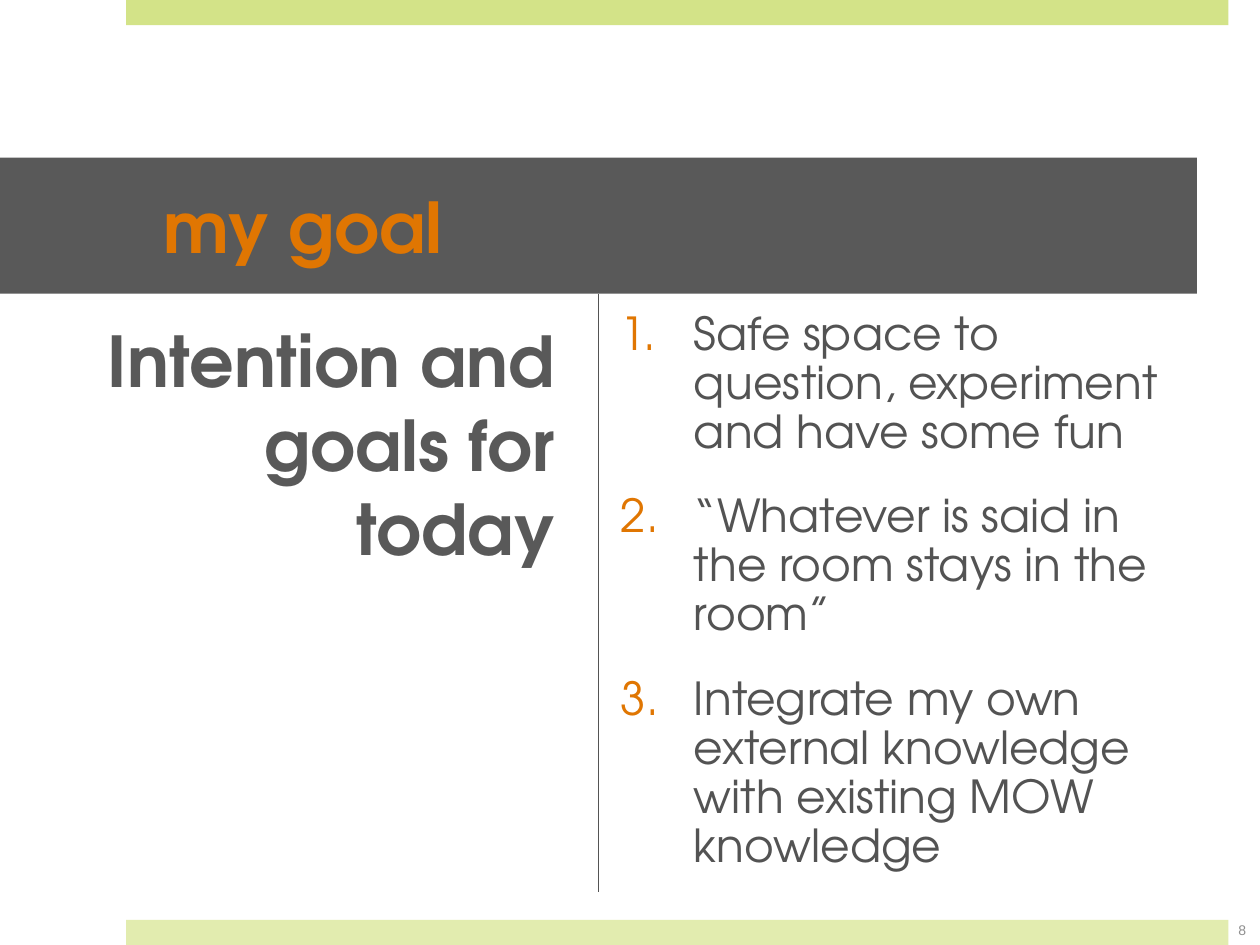
"""Build the "my goal" slide with a title band, an intention and three numbered goals."""
from lxml import etree
from pptx import Presentation
from pptx.dml.color import RGBColor
from pptx.enum import shapes, text
from pptx.oxml import ns
from pptx.util import Inches, Pt

GRAY, DARK_GRAY, ORANGE = "595959", "535353", "E07602"
FONT = "TeX Gyre Adventor"
GOALS = [
    "Safe space to question, experiment and have some fun",
    "“Whatever is said in the room stays in the room”",
    "Integrate my own external knowledge with existing MOW knowledge",
]


def color(value):
    return RGBColor.from_string(value)


def add_run(paragraph, words, size, value, name=FONT, bold=False):
    run = paragraph.add_run()
    run.text = words
    run.font.name = name
    run.font.size = Pt(size)
    run.font.bold = bold
    run.font.color.rgb = color(value)


presentation = Presentation()
presentation.slide_width = Inches(10)
presentation.slide_height = Inches(7.5)
slide = presentation.slides.add_slide(presentation.slide_layouts[6])

bars = []
for left, top, width, height, fill in [
    (1, 0, 8.75, 0.2, "D3E388"),
    (1, 7.3, 8.75, 0.2, "E2ECAF"),
    (0, 1.25, 9.5, 1.08, GRAY),
]:
    shape = slide.shapes.add_shape(
        shapes.MSO_SHAPE.RECTANGLE, Inches(left), Inches(top), Inches(width), Inches(height)
    )
    shape.shadow.inherit = False
    shape.fill.solid()
    shape.fill.fore_color.rgb = color(fill)
    shape.line.fill.background()
    bars.append(shape)

title = bars[-1]
title.text_frame.margin_left = Inches(1.3)
title.text_frame.margin_right = Inches(0.3)
title.text_frame.vertical_anchor = text.MSO_ANCHOR.MIDDLE
paragraph = title.text_frame.paragraphs[0]
paragraph.alignment = text.PP_ALIGN.LEFT
add_run(paragraph, "my goal", 40, ORANGE, bold=True)

frames = []
for left, top, width, height in [
    (9.61, 7.18, 0.5, 0.4),
    (0.25, 2.47, 4.25, 4.95),
    (4.83, 2.42, 4.67, 4.95),
]:
    box = slide.shapes.add_textbox(Inches(left), Inches(top), Inches(width), Inches(height))
    box.text_frame.word_wrap = True
    frames.append(box.text_frame)
number_frame, intention_frame, goals_frame = frames

number_frame.vertical_anchor = text.MSO_ANCHOR.MIDDLE
paragraph = number_frame.paragraphs[0]
paragraph.alignment = text.PP_ALIGN.CENTER
add_run(paragraph, "8", 8, "8F8F8F", name="Arial")

paragraph = intention_frame.paragraphs[0]
paragraph.alignment = text.PP_ALIGN.RIGHT
properties = paragraph._p.get_or_add_pPr()
properties.set("marL", str(Inches(0.56)))
properties.set("indent", str(-Inches(0.56)))
add_run(paragraph, "Intention and goals for today", 40, GRAY, bold=True)

for index, goal in enumerate(GOALS):
    paragraph = goals_frame.add_paragraph() if index else goals_frame.paragraphs[0]
    paragraph.line_spacing = 0.9
    if index:
        paragraph.space_before = Pt(20)
    properties = paragraph._p.get_or_add_pPr()
    properties.set("marL", str(Inches(0.58)))
    properties.set("indent", str(-Inches(0.58)))
    bullet_color = etree.SubElement(properties, ns.qn("a:buClr"))
    etree.SubElement(bullet_color, ns.qn("a:srgbClr"), val=ORANGE)
    etree.SubElement(properties, ns.qn("a:buFont"), typeface=FONT)
    etree.SubElement(properties, ns.qn("a:buAutoNum"), type="arabicPeriod")
    add_run(paragraph, goal, 26, DARK_GRAY)

divider = slide.shapes.add_connector(
    shapes.MSO_CONNECTOR.STRAIGHT, Inches(4.75), Inches(2.33), Inches(4.75), Inches(7.08)
)
divider.begin_connect(title, 2)
divider.line.color.rgb = color(DARK_GRAY)
divider.line.width = Pt(0.75)
etree.SubElement(divider._element.spPr, ns.qn("a:effectLst"))

presentation.save("out.pptx")
